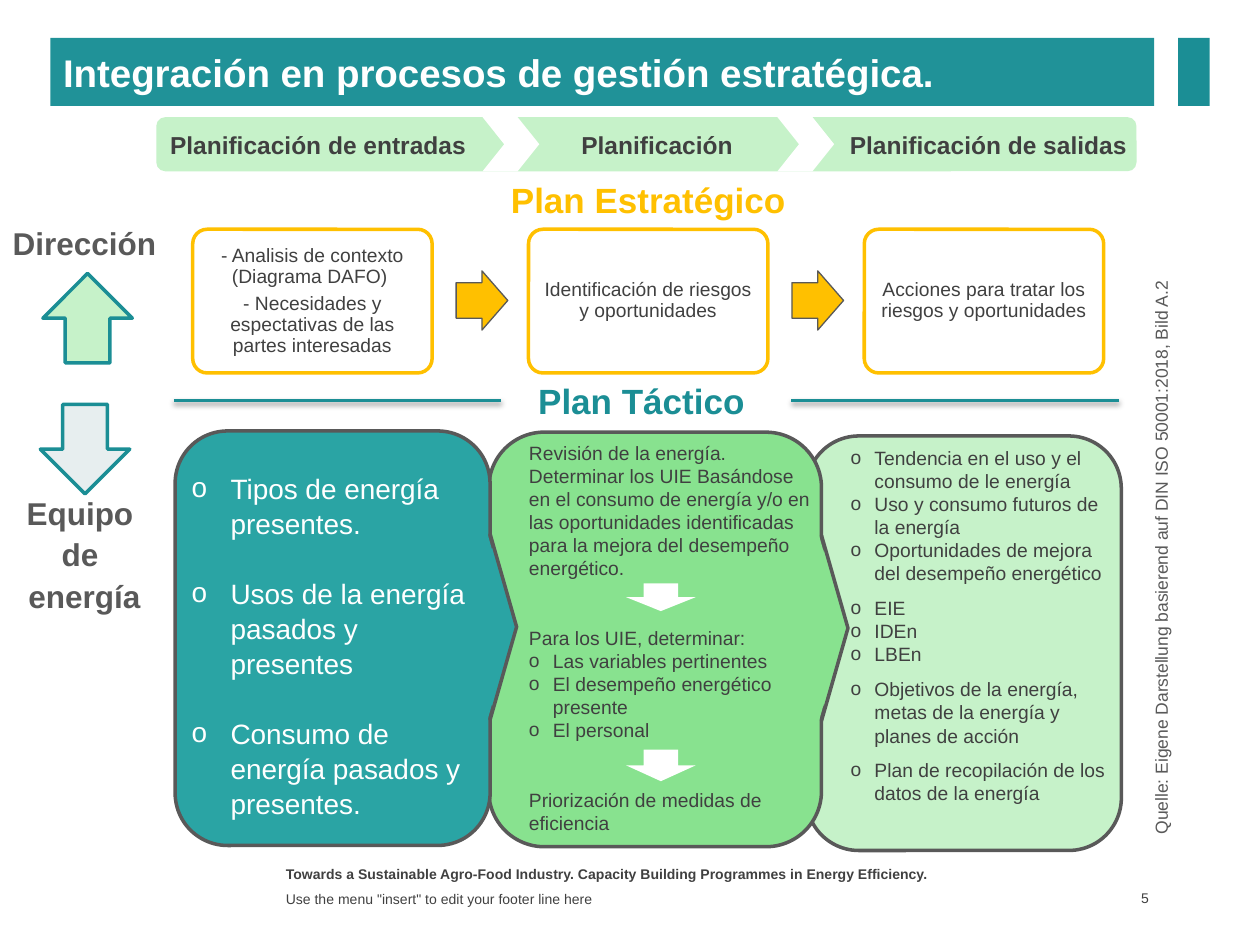
from lxml.etree import SubElement
from pptx import Presentation
from pptx.dml.color import RGBColor
from pptx.enum.shapes import MSO_CONNECTOR, MSO_SHAPE as Kind
from pptx.enum.text import MSO_ANCHOR as Anchor, MSO_AUTO_SIZE as Fit, PP_ALIGN as Align
from pptx.oxml.ns import qn
from pptx.util import Inches, Pt

HUES = {
    "teal": "1B8E95", "bar": "209298", "deep": "2AA4A4", "green": "88E28F",
    "pale": "C6F2C9", "ice": "E7EEEF", "gold": "FFC000", "white": "FFFFFF",
    "ink": "404040", "grey": "595959",
}
HUES = {name: RGBColor.from_string(code) for name, code in HUES.items()}

deck = Presentation()
deck.slide_width, deck.slide_height = Inches(10), Inches(7.5)
unit = deck.slide_width / 100  # grid of 100 columns by 75 rows
slide = deck.slides.add_slide(deck.slide_layouts[3])
shapes = slide.shapes
title, left, right = slide.placeholders


def draw(kind, box, fill, line=None, wide=2, rot=0, adj=()):
    """Add a preset shape at a place on the grid."""
    form = shapes.add_shape(kind, *[int(n * unit) for n in box])
    form.shadow.inherit = False
    form.fill.solid()
    form.fill.fore_color.rgb = HUES[fill]
    if line:
        form.line.color.rgb = HUES[line]
        form.line.width = Pt(wide)
    else:
        form.line.fill.background()
    form.rotation = rot
    for i, part in enumerate(adj):
        form.adjustments[i] = part
    return form


def write(lines, size, hue, box=None, form=None, bold=False, align=Align.LEFT,
          anchor=Anchor.TOP, lead=None, gaps={}, dots=(), dent=0.19):
    """Fill a form, or a new text box; gaps and dots go by line number."""
    form = form or shapes.add_textbox(0, 0, 0, 0)
    if box:
        form.left, form.top, form.width, form.height = [int(n * unit) for n in box]
    frame = form.text_frame
    frame.text = "\n".join(lines)
    frame.word_wrap = True
    frame.auto_size = Fit.NONE
    frame.vertical_anchor = anchor
    for i, para in enumerate(frame.paragraphs):
        para.alignment = align
        para.space_before = Pt(gaps.get(i, 0))
        if lead:
            para.line_spacing = lead
        if i in dots:
            props = para._p.get_or_add_pPr()
            props.set("marL", str(Inches(dent)))
            props.set("indent", str(-Inches(dent)))
            SubElement(props, qn("a:buFont")).set("typeface", "Arial")
            SubElement(props, qn("a:buChar")).set("char", "o")
        for run in para.runs:
            run.font.name = "Arial"
            run.font.size = Pt(size)
            run.font.bold = bold
            run.font.color.rgb = HUES[hue]
    return form


# Title bar
write(["Integración en procesos de gestión estratégica."], 22, "white",
      (4, 3, 87.6, 5.4), title, bold=True, anchor=Anchor.MIDDLE)
title.fill.solid()
title.fill.fore_color.rgb = HUES["bar"]
draw(Kind.RECTANGLE, (93.5, 3, 2.5, 5.4), "teal")

# Phase band
draw(Kind.ROUNDED_RECTANGLE, (12.4, 9.3, 77.8, 4.3), "pale")
for x in (38.3, 61.7):
    draw(Kind.CHEVRON, (x, 9.3, 4.5, 4.3), "white", adj=[0.4])
for x, wide, text in ((12.2, 26.1, "Planificación de entradas"),
                      (42.7, 18.9, "Planificación"),
                      (66.1, 24.7, "Planificación de salidas")):
    write([text], 14, "ink", (x, 9.8, wide, 3.4), bold=True, align=Align.CENTER)

# Strategic plan: cards joined by arrows
cards = [
    ["- Analisis de contexto (Diagrama DAFO) ",
     "- Necesidades y espectativas de las partes interesadas"],
    ["Identificación de riesgos y oportunidades"],
    ["Acciones para tratar los riesgos y oportunidades"],
]
pitch = 26.65
for i, lines in enumerate(cards):
    card = draw(Kind.ROUNDED_RECTANGLE, (15.3 + i * pitch, 18.2, 19, 11.4),
                "white", "gold", adj=[0.1])
    frame = card.text_frame
    frame.margin_left = frame.margin_right = Inches(0.05)
    write(lines, 11, "ink", form=card, align=Align.CENTER, anchor=Anchor.MIDDLE,
          lead=0.9, gaps={1: 3.85})
    if i:
        draw(Kind.RIGHT_ARROW, (9.55 + i * pitch, 21.5, 4.1, 4.7),
             "gold", "grey", 0.75, adj=[0.6, 0.5])

# Level headings and the rule between them
write(["Plan Estratégico"], 20, "gold", (34.5, 13.7, 33.9, 4.3),
      bold=True, align=Align.CENTER)
write(["Plan Táctico "], 20, "teal", (39.8, 29.6, 23, 4.6),
      bold=True, align=Align.CENTER)
for x in (13.8, 62.8):
    rule = shapes.add_connector(MSO_CONNECTOR.STRAIGHT, *[
        int(n * unit) for n in (x, 31.8, x + 26, 31.8)])
    rule.line.color.rgb = HUES["teal"]
    rule.line.width = Pt(2)
    glow = SubElement(rule._element.spPr, qn("a:effectLst"))
    shade = SubElement(glow, qn("a:outerShdw"), blurRad=str(Pt(3.1)),
                       dist=str(Pt(1.6)), dir="5400000", rotWithShape="0")
    black = SubElement(shade, qn("a:srgbClr"), val="000000")
    SubElement(black, qn("a:alpha"), val="38000")

# Who is in charge
write(["Dirección"], 18, "grey", (0, 17.3, 13.4, 4.2), bold=True, align=Align.CENTER)
draw(Kind.RIGHT_ARROW, (3.4, 21.7, 7.1, 7.1), "pale", "teal", rot=270)
draw(Kind.RIGHT_ARROW, (3.2, 32.1, 7.1, 7.1), "ice", "teal", rot=90)
write(["Equipo ", "de ", "energía"], 18, "grey", (0, 39.2, 13.4, 8.7), bold=True,
      align=Align.CENTER, lead=Pt(18), gaps={1: 5.8, 2: 5.8})

# Tactical plan: panels, each with a pointer to the next
draw(Kind.ROUNDED_RECTANGLE, (64, 34.6, 25, 32.9), "pale", "grey")
for x, y, wide, tip, hue in ((38.8, 34.3, 26.4, 58.9, "green"),
                             (13.9, 34.2, 25, 32.6, "deep")):
    draw(Kind.ROUNDED_RECTANGLE, (x, y, wide, 32.9), hue, "grey")
    for shift, line in ((0, "grey"), (-0.2, None)):
        draw(Kind.ISOSCELES_TRIANGLE, (tip + shift, y + 14.5, 14.7, 2.1),
             hue, line, rot=90)

# Lists on the panels
write(["Tipos de energía presentes.",
       "Usos de la energía pasados y presentes",
       "Consumo de energía pasados y presentes."],
      16, "white", (14.2, 36.8, 24.7, 28.9), left, lead=Pt(20),
      gaps={1: 20, 2: 20}, dots=range(3), dent=0.31)
write(["Revisión de la energía.",
       "Determinar los UIE Basándose en el consumo de energía y/o en las "
       "oportunidades identificadas para la mejora del desempeño energético.",
       "Para los UIE, determinar:",
       "Las variables pertinentes",
       "El desempeño energético presente",
       "El personal",
       "Priorización de medidas de eficiencia"],
      11, "ink", (41, 34.5, 24.7, 32.5), gaps={2: 26.5, 6: 26.5}, dots=range(3, 6))
write(["Tendencia en el uso y el consumo de le energía",
       "Uso y consumo futuros de la energía",
       "Oportunidades de mejora del desempeño energético",
       "EIE", "IDEn", "LBEn",
       "Objetivos de la energía, metas de la energía y planes de acción",
       "Plan de recopilación de los datos de la energía"],
      11, "ink", (66.5, 34.9, 22.4, 31), right,
      gaps={3: 6.7, 6: 6.7, 7: 6.7}, dots=range(8))
for y, high in ((46.3, 2.2), (59.5, 2.5)):
    draw(Kind.DOWN_ARROW, (49.7, y, 5.5, high), "white")

# Bring the two list placeholders in front of their panels
for form in (left, right):
    shapes._spTree.append(form._element)

# Source note and footer
note = write(["Quelle: Eigene Darstellung basierend auf DIN ISO 50001:2018, Bild A.2"],
             10, "grey", (69.5, 41.8, 46.7, 4.1))
note.rotation = 270
write(["Towards a Sustainable Agro-Food Industry. "
       "Capacity Building Programmes in Energy Efficiency."],
      8, "ink", (21.7, 68.2, 55, 2.1), bold=True)
write(['Use the menu "insert" to edit your footer line here'],
      8, "ink", (21.7, 70.4, 55, 1.9), anchor=Anchor.MIDDLE)
page = write(["5"], 8, "ink", (86, 70.3, 5.6, 2), align=Align.RIGHT, anchor=Anchor.MIDDLE)
page.text_frame.margin_right = Inches(0.04)

deck.save("out.pptx")
